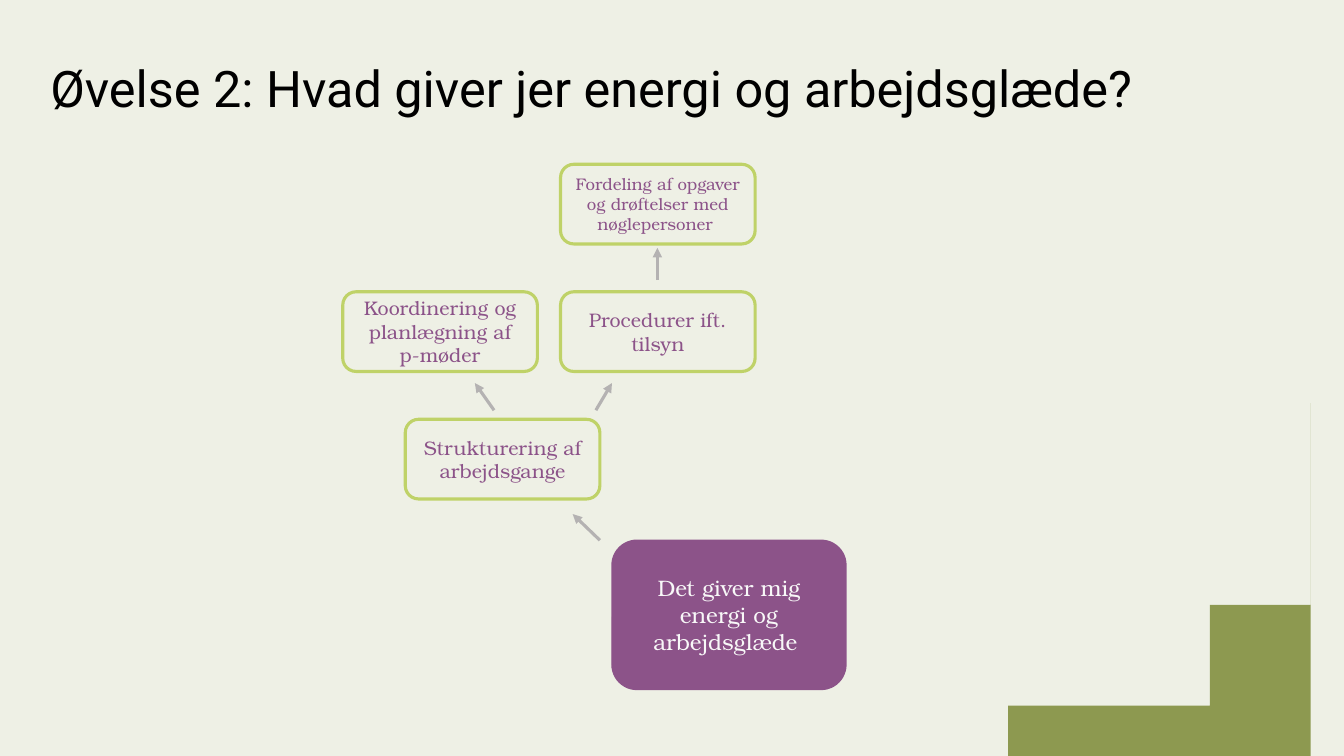
import pptx
import pptx.util
import pptx.dml.color
import pptx.enum.shapes
import pptx.enum.text
import pptx.oxml
import pptx.oxml.ns

Inch = pptx.util.Inches
Pt = pptx.util.Pt
KIND = pptx.enum.shapes.MSO_SHAPE.ROUNDED_RECTANGLE
ALIGN = pptx.enum.text.PP_ALIGN
MIDDLE = pptx.enum.text.MSO_ANCHOR.MIDDLE

CREAM, OLIVE, LIME = "EEF0E5", "8D9950", "BFD268"
PLUM, WHITE, GREY = "8C5389", "F8F8F8", "B4B2B2"
SERIF = "TeX Gyre Bonum"


def paint(fmt, tone):
    """Give a fill a solid colour from a hex string."""
    fmt.solid()
    fmt.fore_color.rgb = pptx.dml.color.RGBColor.from_string(tone)


def write(shape, text, size, face, tone, align):
    frame = shape.text_frame
    frame.text = text
    frame.word_wrap = True
    frame.vertical_anchor = MIDDLE
    par = frame.paragraphs[0]
    par.alignment = align
    font = par.runs[0].font
    font.size, font.name = Pt(size), face
    paint(font.fill, tone)
    return par


deck = pptx.Presentation()
deck.slide_width, deck.slide_height = Inch(13.33), Inch(7.5)
slide = deck.slides.add_slide(deck.slide_layouts[6])
paint(slide.background.fill, CREAM)
shapes = slide.shapes

# Corner: a cubic curve sampled in even steps
curve = [(9.67, 7.5), (11.57, 7.5), (13.14, 6.02), (13.33, 4.13)]
steps = 60
edge = []
for step in range(1, steps + 1):
    t = step / steps
    parts = [(1 - t) ** 3, 3 * t * (1 - t) ** 2, 3 * t * t * (1 - t), t ** 3]
    edge.append(tuple(sum(w * p[axis] for w, p in zip(parts, curve))
                      for axis in (0, 1)))
build = shapes.build_freeform(9.67, 7.5, scale=Inch(1))
build.add_line_segments(edge + [(13.33, 4.08), (13.33, 7.5)], close=True)
corner = build.convert_to_shape()
corner.shadow.inherit = False
paint(corner.fill, OLIVE)
corner.line.fill.background()

# Title
title = shapes.add_textbox(Inch(0.4), Inch(0.18), Inch(11.19), Inch(1.45))
par = write(title, "Øvelse 2: Hvad giver jer energi og arbejdsglæde?",
            36, "Roboto", "000000", ALIGN.LEFT)
par.line_spacing = 0.9

# Boxes: three rows of equal pitch above the start box
top, pitch, wide, high = 1.63, 1.265, 1.93, 0.79
rows = [top + pitch * row for row in range(3)]
small = (wide, high, CREAM, LIME, 2.25, PLUM)
start = (2.32, 1.48, PLUM, PLUM, 1, WHITE)
boxes = [
    (6.07, 5.36, start, 16, "Det giver mig energi og arbejdsglæde "),
    (4.02, rows[2], small, 14, "Strukturering af arbejdsgange"),
    (5.56, rows[1], small, 14, "Procedurer ift. tilsyn"),
    (5.56, rows[0], small, 12,
     "Fordeling af opgaver og drøftelser med nøglepersoner "),
    (3.4, rows[1], small, 14, "Koordinering og planlægning af p-møder"),
]
for x, y, style, size, text in boxes:
    w, h, fill, rim, thick, ink = style
    box = shapes.add_shape(KIND, Inch(x), Inch(y), Inch(w), Inch(h))
    box.shadow.inherit = False
    paint(box.fill, fill)
    paint(box.line.fill, rim)
    box.line.width = Pt(thick)
    write(box, text, size, SERIF, ink, ALIGN.CENTER)

# Arrows
arrows = [
    (5.95, 5.36, 5.68, 5.1),
    (4.9, 4.07, 4.71, 3.8),
    (5.91, 4.07, 6.07, 3.8),
    (6.52, 2.78, 6.52, 2.46),
]
for ends in arrows:
    arrow = shapes.add_connector(
        pptx.enum.shapes.MSO_CONNECTOR.STRAIGHT, *map(Inch, ends))
    paint(arrow.line.fill, GREY)
    arrow.line.width = Pt(2.25)
    tip = pptx.oxml.parse_xml(
        f'<a:tailEnd {pptx.oxml.ns.nsdecls("a")} type="triangle"/>')
    arrow.line._get_or_add_ln().append(tip)
    plain = pptx.oxml.parse_xml(f'<a:effectLst {pptx.oxml.ns.nsdecls("a")}/>')
    arrow._element.spPr.append(plain)

deck.save("out.pptx")
